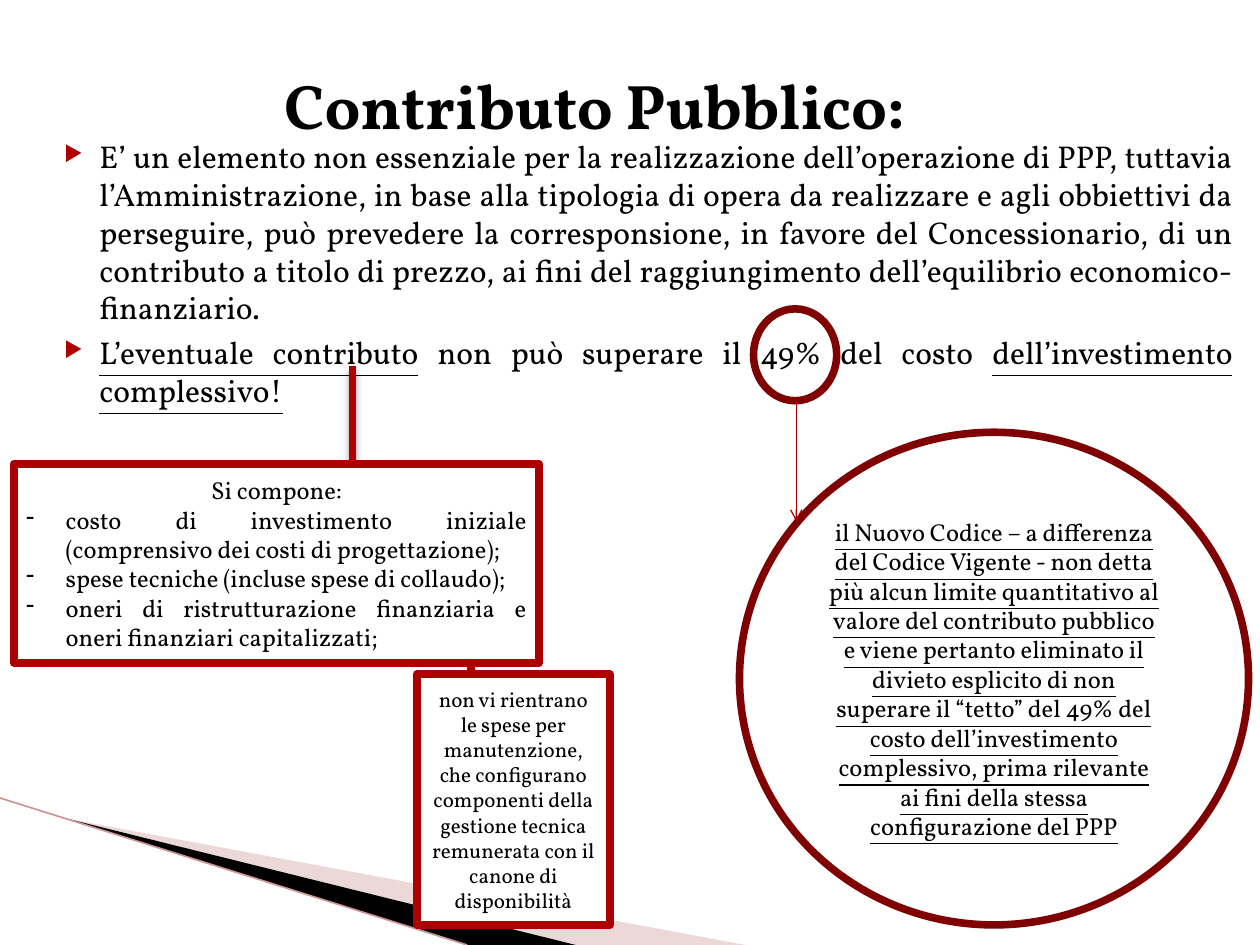
from lxml.etree import SubElement
from pptx import Presentation
from pptx.dml.color import RGBColor
from pptx.enum.shapes import MSO_CONNECTOR, MSO_SHAPE
from pptx.enum.text import MSO_ANCHOR, PP_ALIGN
from pptx.oxml.ns import qn
from pptx.util import Pt

COLORS = {"text": "000000", "paper": "FFFFFF", "red": "AD0101", "dark_red": "800101",
          "pale": "D29E9E", "edge": "CD9595"}
FONT = "Vollkorn"
THICK = 4.33

DEFINITION = ("E’ un elemento non essenziale per la realizzazione dell’operazione di PPP, tuttavia "
              "l’Amministrazione, in base alla tipologia di opera da realizzare e agli obbiettivi da "
              "perseguire, può prevedere la corresponsione, in favore del Concessionario, di un "
              "contributo a titolo di prezzo, ai fini del raggiungimento dell’equilibrio "
              "economico-finanziario.")
LIMIT = [("L’eventuale contributo", True), (" non può superare il 49% del costo ", False),
         ("dell’investimento complessivo!", True)]
COSTS = ["costo di investimento iniziale (comprensivo dei costi di progettazione);",
         "spese tecniche (incluse spese di collaudo);",
         "oneri di ristrutturazione finanziaria e oneri finanziari capitalizzati;"]
EXCLUDED = ("non vi rientrano le spese per manutenzione, che configurano componenti della "
            "gestione tecnica remunerata con il canone di disponibilità")
NEW_CODE = ("il Nuovo Codice – a differenza del Codice Vigente - non detta più alcun limite "
            "quantitativo al valore del contributo pubblico e viene pertanto eliminato il divieto "
            "esplicito di non superare il “tetto” del 49% del costo dell’investimento complessivo, "
            "prima rilevante ai fini della stessa configurazione del PPP")


def color(name):
    return RGBColor.from_string(COLORS[name])


def set_format(target, values):
    for name, value in values.items():
        setattr(target, name, value)


def add_bullet(para, mark, indent, hanging, tint=None, percent=None):
    properties = para._p.get_or_add_pPr()
    properties.set("marL", str(Pt(indent)))
    properties.set("indent", str(-Pt(hanging)))
    if tint:
        bullet_color = SubElement(properties, qn("a:buClr"))
        SubElement(bullet_color, qn("a:srgbClr"), val=COLORS[tint])
    if percent:
        SubElement(properties, qn("a:buSzPct"), val=str(percent * 1000))
    SubElement(properties, qn("a:buChar"), char=mark)


def write_paragraphs(frame, paragraphs, size, anchor=MSO_ANCHOR.MIDDLE):
    set_format(frame, {"word_wrap": True, "vertical_anchor": anchor})
    for index, (spans, alignment, bullet, extra) in enumerate(paragraphs):
        para = frame.paragraphs[0] if index == 0 else frame.add_paragraph()
        para.alignment = alignment
        if bullet:
            add_bullet(para, **bullet)
        for words, underline in spans:
            span = para.add_run()
            span.text = words
            set_format(span.font, {"name": FONT, "size": Pt(size), "underline": underline, **extra})
            span.font.color.rgb = color("text")


def add_text(page, box, paragraphs, size, anchor=MSO_ANCHOR.MIDDLE):
    text_box = page.shapes.add_textbox(*map(Pt, box))
    write_paragraphs(text_box.text_frame, paragraphs, size, anchor)
    return text_box.text_frame


def add_outlined(page, kind, box, outline, filled=False):
    shape = page.shapes.add_shape(kind, *map(Pt, box))
    shape.shadow.inherit = False
    if filled:
        shape.fill.solid()
        shape.fill.fore_color.rgb = color("paper")
    else:
        shape.fill.background()
    shape.line.color.rgb = color(outline)
    shape.line.width = Pt(THICK)
    return shape


def add_line(page, start, end, tint, width, shadow=False, arrow=False):
    line = page.shapes.add_connector(MSO_CONNECTOR.STRAIGHT, *map(Pt, (*start, *end)))
    line.line.color.rgb = color(tint)
    line.line.width = Pt(width)
    if arrow:
        SubElement(line.line._get_or_add_ln(), qn("a:tailEnd"), type="arrow")
    effects = SubElement(line._element.spPr, qn("a:effectLst"))
    if shadow:
        outer = SubElement(effects, qn("a:outerShdw"), blurRad=str(Pt(4)), dist=str(Pt(3)),
                           dir="5400000", rotWithShape="0")
        shade = SubElement(outer, qn("a:srgbClr"), val=COLORS["text"])
        SubElement(shade, qn("a:alpha"), val="35000")


def add_wedge(page, points, tint, opacity=None):
    builder = page.shapes.build_freeform(*points[0], scale=Pt(1))
    builder.add_line_segments(points[1:], close=True)
    wedge = builder.convert_to_shape()
    wedge.shadow.inherit = False
    wedge.fill.solid()
    wedge.fill.fore_color.rgb = color(tint)
    wedge.line.fill.background()
    if opacity:
        shade = wedge._element.spPr.find(qn("a:solidFill"))[0]
        SubElement(shade, qn("a:alpha"), val=str(opacity * 1000))


def draw_corner(page, box):
    left, top, width, height = box
    bottom = top + height
    tip = (left + 39, top + 12)
    black_end = (left + 329, bottom)
    add_wedge(page, [tip, (left + width, bottom), black_end], "pale", 40)
    add_wedge(page, [tip, black_end, (left + 267, bottom)], "text")
    add_line(page, (left, top), (left + 267, bottom), "edge", 0.95)


def draw_body(page, box):
    bullet = {"mark": "▶", "indent": 28.8, "hanging": 20.16, "tint": "red", "percent": 68}
    paragraphs = [(spans, PP_ALIGN.JUSTIFY, bullet, {}) for spans in ([(DEFINITION, False)], LIMIT)]
    frame = add_text(page, box, paragraphs, 18, MSO_ANCHOR.TOP)
    frame.paragraphs[1].space_before = Pt(4)


def draw_title(page, box):
    add_text(page, box, [([("Contributo Pubblico:", False)], PP_ALIGN.CENTER, None, {"bold": True})], 36)


def draw_costs(page, box):
    left, top, width, height = box
    stem = left + 193.5
    add_line(page, (stem, top - 56), (stem, top + 11), "red", THICK, shadow=True)
    panel = add_outlined(page, MSO_SHAPE.RECTANGLE, box, "red", filled=True)
    bullet = {"mark": "-", "indent": 22.5, "hanging": 22.5}
    paragraphs = [([("Si compone:", False)], PP_ALIGN.CENTER, None, {})]
    paragraphs += [([(cost, False)], PP_ALIGN.JUSTIFY, bullet, {}) for cost in COSTS]
    write_paragraphs(panel.text_frame, paragraphs, 14)


def draw_excluded(page, box):
    left, top, width, height = box
    stem = left + 31
    add_line(page, (stem, top - 6.5), (stem, top + 26.5), "red", THICK, shadow=True)
    panel = add_outlined(page, MSO_SHAPE.RECTANGLE, box, "red", filled=True)
    write_paragraphs(panel.text_frame, [([(EXCLUDED, False)], PP_ALIGN.CENTER, None, {})], 12)


def draw_new_code(page, box):
    left, top, width, height = box
    add_outlined(page, MSO_SHAPE.OVAL, (left + 8, top - 70.5, 47.5, 52.5), "dark_red")
    circle = add_outlined(page, MSO_SHAPE.OVAL, box, "dark_red")
    write_paragraphs(circle.text_frame, [([(NEW_CODE, True)], PP_ALIGN.CENTER, None, {})], 14)
    stem = left + 32.4
    add_line(page, (stem, top - 18), (stem, top + 51), "red", 0.75, arrow=True)


def main():
    deck = Presentation()
    set_format(deck, {"slide_width": Pt(720), "slide_height": Pt(540)})
    page = deck.slides.add_slide(deck.slide_layouts[6])
    draw_corner(page, (0, 456, 426, 84))
    draw_body(page, (20.9, 74.9, 690.5, 320.4))
    draw_title(page, (29.5, 7.2, 620.6, 104.4))
    draw_costs(page, (7.9, 265, 300.2, 113.8))
    draw_excluded(page, (238.3, 385.2, 110.2, 143.3))
    draw_new_code(page, (422.6, 247, 290.9, 281.5))
    deck.save("out.pptx")


if __name__ == "__main__":
    main()
